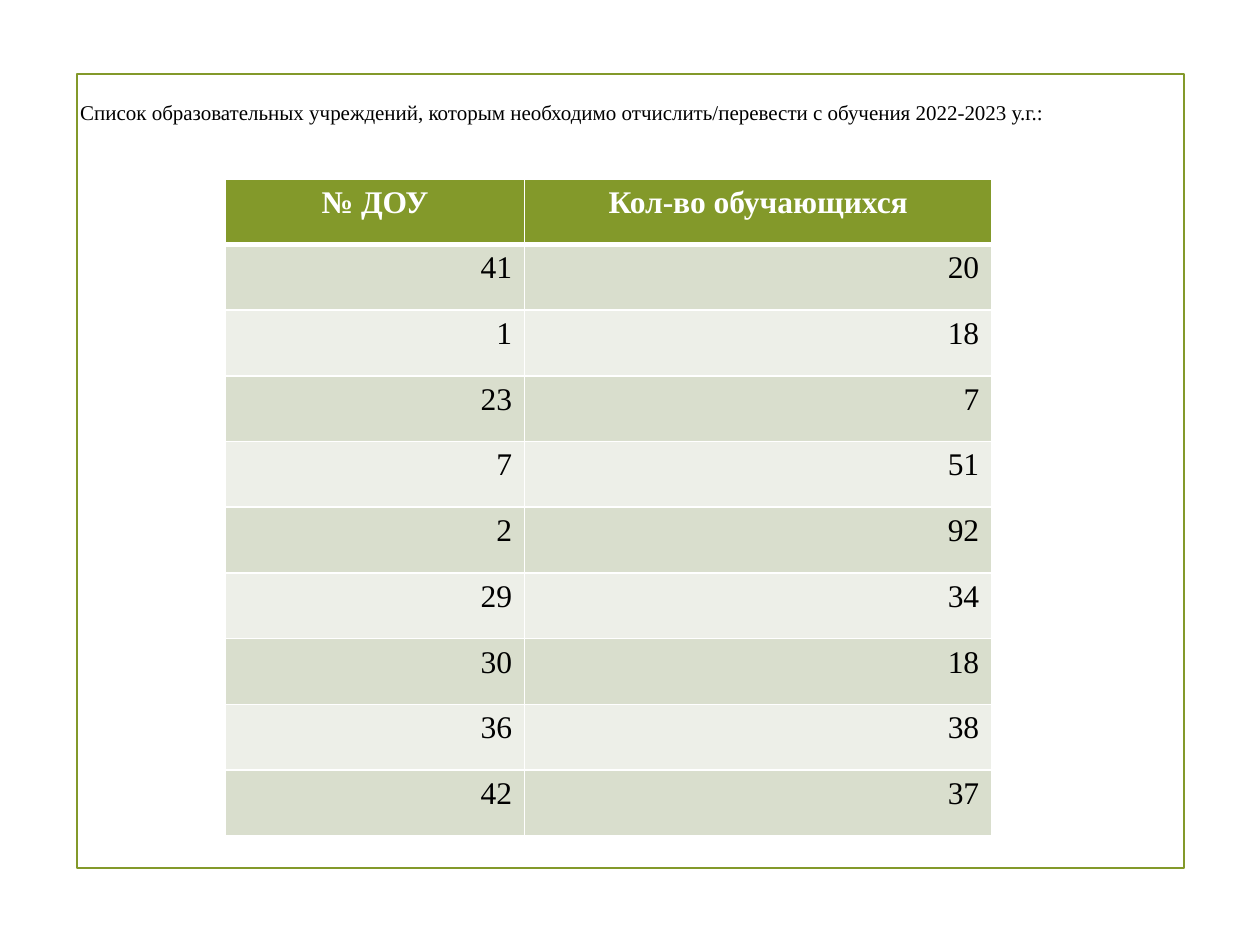
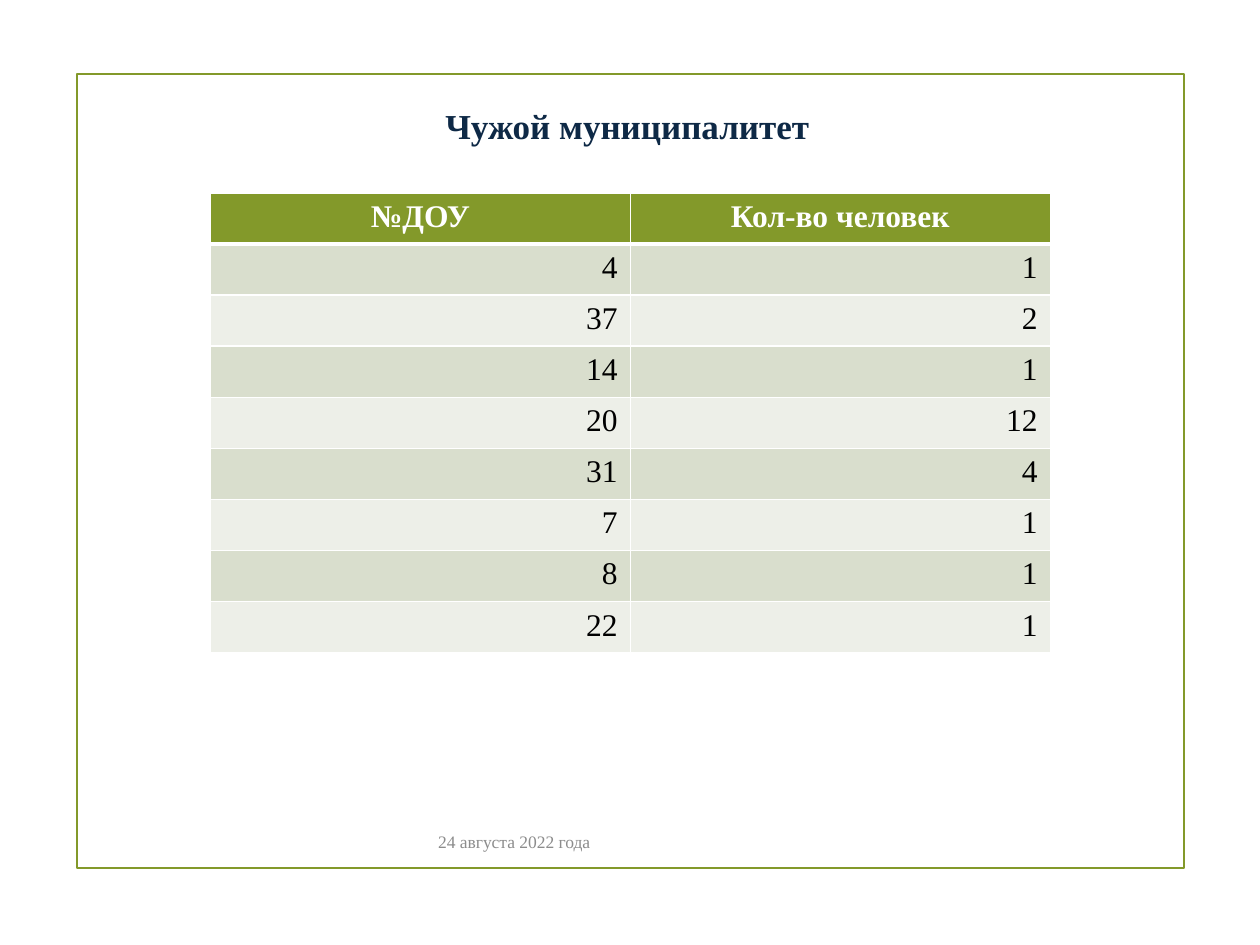
"""Build two slides that list preschools and their numbers of pupils."""
import dataclasses

import lxml.etree
import pptx
import pptx.dml.color
import pptx.enum.shapes
import pptx.enum.text
import pptx.oxml.ns
import pptx.util

Pt = pptx.util.Pt
Align = pptx.enum.text.PP_ALIGN


@dataclasses.dataclass(frozen=True)
class Theme:
    font: str = "Times New Roman"
    green: str = "83992A"
    dark_band: str = "D9DECD"
    light_band: str = "EDEFE8"
    navy: str = "0E2946"
    gray: str = "8C8C8C"
    white: str = "FFFFFF"
    black: str = "000000"
    title_size: float = 20
    table_size: float = 18
    caption_size: float = 12
    footer_size: float = 10
    frame_width: float = 1.25
    grid_width: float = 1
    header_rule: float = 3


THEME = Theme()

TRANSFERS = [
    ("№ ДОУ", "Кол-во обучающихся"),
    (41, 20), (1, 18), (23, 7), (7, 51), (2, 92),
    (29, 34), (30, 18), (36, 38), (42, 37),
]
OTHER_MUNICIPALITY = [
    ("№ДОУ", "Кол-во человек"),
    (4, 1), (37, 2), (14, 1), (20, 12), (31, 4), (7, 1), (8, 1), (22, 1),
]


def rgb(color):
    return pptx.dml.color.RGBColor.from_string(color)


def write(frame, text, size, color, align, bold=False):
    para = frame.paragraphs[0]
    para.alignment = align
    span = para.add_run()
    span.text = text
    span.font.name = THEME.font
    span.font.size = Pt(size)
    span.font.bold = bold
    span.font.color.rgb = rgb(color)


def add_framed_page(deck):
    page = deck.slides.add_slide(deck.slide_layouts[6])
    frame = page.shapes.add_shape(
        pptx.enum.shapes.MSO_SHAPE.RECTANGLE, Pt(43.9), Pt(42.5), Pt(632.9), Pt(453.6))
    frame.shadow.inherit = False
    frame.fill.background()
    frame.line.color.rgb = rgb(THEME.green)
    frame.line.width = Pt(THEME.frame_width)
    return page


def add_label(page, place, text, size, color, align=Align.CENTER, bold=False):
    box = page.shapes.add_textbox(*map(Pt, place))
    frame = box.text_frame
    frame.word_wrap = True
    frame.vertical_anchor = pptx.enum.text.MSO_ANCHOR.MIDDLE
    frame.margin_left = frame.margin_right = frame.margin_top = frame.margin_bottom = 0
    write(frame, text, size, color, align, bold)


def set_border(cell, side, width):
    qn = pptx.oxml.ns.qn
    properties = cell._tc.get_or_add_tcPr()
    line = lxml.etree.SubElement(properties, qn(f"a:ln{side}"), w=str(Pt(width)))
    fill = lxml.etree.SubElement(line, qn("a:solidFill"))
    lxml.etree.SubElement(fill, qn("a:srgbClr"), val=THEME.white)


def style_cell(cell, value, row):
    header = row == 0
    for side in "LRTB":
        under_header = (row, side) in ((0, "B"), (1, "T"))
        set_border(cell, side, THEME.header_rule if under_header else THEME.grid_width)
    band = THEME.dark_band if row % 2 else THEME.light_band
    cell.fill.solid()
    cell.fill.fore_color.rgb = rgb(THEME.green if header else band)
    write(cell.text_frame, str(value), THEME.table_size,
          THEME.white if header else THEME.black,
          Align.CENTER if header else Align.RIGHT, header)


def add_banded_table(page, left, top, column_widths, row_height, records):
    table = page.shapes.add_table(
        len(records), len(column_widths), Pt(left), Pt(top),
        Pt(sum(column_widths)), Pt(row_height * len(records))).table
    table.horz_banding = False
    for column, width in zip(table.columns, column_widths):
        column.width = Pt(width)
    for row, record in enumerate(records):
        table.rows[row].height = Pt(row_height)
        for column, value in enumerate(record):
            style_cell(table.cell(row, column), value, row)


def main():
    deck = pptx.Presentation()
    deck.slide_width, deck.slide_height = Pt(720), Pt(540)

    page = add_framed_page(deck)
    add_label(page, (45.8, 55, 630, 18),
              "Список образовательных учреждений, которым необходимо "
              "отчислить/перевести с обучения 2022-2023 у.г.:",
              THEME.caption_size, THEME.black, Align.LEFT)
    add_banded_table(page, 128.9, 102.2, (170.9, 267), 37.55, TRANSFERS)

    page = add_framed_page(deck)
    add_label(page, (72, 54, 573, 36), "Чужой муниципалитет",
              THEME.title_size, THEME.navy, bold=True)
    add_label(page, (92.9, 469.5, 401.8, 22.3), "24 августа 2022 года",
              THEME.footer_size, THEME.gray)
    add_banded_table(page, 120.2, 110.2, (240, 240), 29.2, OTHER_MUNICIPALITY)

    deck.save("out.pptx")


if __name__ == "__main__":
    main()
